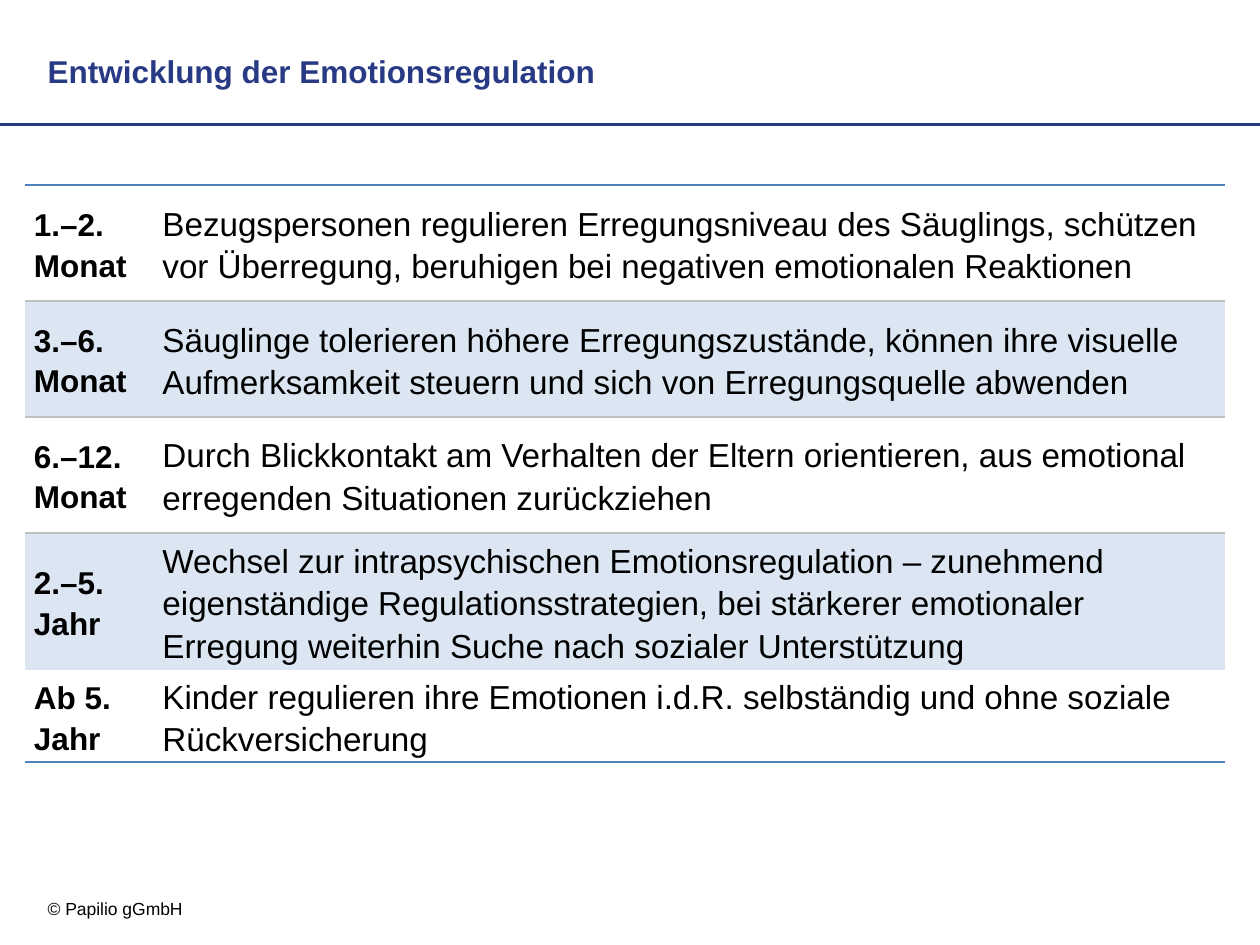
from dataclasses import dataclass

from lxml import etree
from pptx import Presentation
from pptx.dml.color import RGBColor
from pptx.enum import shapes, text
from pptx.oxml.ns import qn
from pptx.util import Inches, Pt


@dataclass(frozen=True)
class Theme:
    font: str = "Arial"
    navy: str = "283A84"
    black: str = "000000"
    blue: str = "4F81BD"
    grey: str = "BFBFBF"
    band: str = "DCE6F2"
    title_size: int = 18
    label_size: int = 18
    body_size: int = 19
    footer_size: int = 10


@dataclass(frozen=True)
class Stage:
    age: str
    description: str
    height: float = 0.92
    top: str | None = None
    bottom: str | None = None


THEME = Theme()
NO_STYLE = "{2D5ABB26-0587-4C30-8999-92F81FD0307C}"
COLUMNS = (1.02, 8.5)
STAGES = (
    Stage("1.–2. Monat",
          "Bezugspersonen regulieren Erregungsniveau des Säuglings, schützen "
          "vor Überregung, beruhigen bei negativen emotionalen Reaktionen",
          top=THEME.blue, bottom=THEME.grey),
    Stage("3.–6. Monat",
          "Säuglinge tolerieren höhere Erregungszustände, können ihre visuelle "
          "Aufmerksamkeit steuern und sich von Erregungsquelle abwenden",
          top=THEME.grey, bottom=THEME.grey),
    Stage("6.–12. Monat",
          "Durch Blickkontakt am Verhalten der Eltern orientieren, aus emotional "
          "erregenden Situationen zurückziehen", top=THEME.grey),
    Stage("2.–5. Jahr",
          "Wechsel zur intrapsychischen Emotionsregulation – zunehmend "
          "eigenständige Regulationsstrategien, bei stärkerer emotionaler "
          "Erregung weiterhin Suche nach sozialer Unterstützung"),
    Stage("Ab 5. Jahr",
          "Kinder regulieren ihre Emotionen i.d.R. selbständig und ohne soziale "
          "Rückversicherung", height=0.61, bottom=THEME.blue),
)


def style_paragraph(para, size: int, color: str, bold: bool = False) -> None:
    para.font.name = THEME.font
    para.font.size = Pt(size)
    para.font.bold = bold
    para.font.color.rgb = RGBColor.from_string(color)


def add_text(page, content: str, left: float, top: float, width: float,
             height: float, size: int, color: str, bold: bool = False) -> None:
    box = page.shapes.add_textbox(
        Inches(left), Inches(top), Inches(width), Inches(height))
    box.text_frame.word_wrap = True
    para = box.text_frame.paragraphs[0]
    para.text = content
    style_paragraph(para, size, color, bold)


def add_rule(page, top: float) -> None:
    rule = page.shapes.add_connector(
        shapes.MSO_CONNECTOR.STRAIGHT, 0, Inches(top), Inches(10), Inches(top))
    rule.line.color.rgb = RGBColor.from_string(THEME.navy)
    rule.line.width = Pt(1.5)
    etree.SubElement(rule._element.spPr, qn("a:effectLst"))


def add_border(cell, side: str, color: str) -> None:
    """Draw a 1 pt border; side is 'T' or 'B'."""
    line = etree.SubElement(
        cell._tc.get_or_add_tcPr(), qn(f"a:ln{side}"), w=str(Pt(1)))
    fill = etree.SubElement(line, qn("a:solidFill"))
    etree.SubElement(fill, qn("a:srgbClr"), val=color)


def fill_cell(cell, content: str, size: int, bold: bool,
              stage: Stage, banded: bool) -> None:
    cell.margin_left = cell.margin_right = Inches(0.07)
    cell.margin_top = cell.margin_bottom = 0
    cell.vertical_anchor = text.MSO_ANCHOR.MIDDLE
    for side, color in (("T", stage.top), ("B", stage.bottom)):
        if color:
            add_border(cell, side, color)
    if banded:
        cell.fill.solid()
        cell.fill.fore_color.rgb = RGBColor.from_string(THEME.band)
    else:
        cell.fill.background()
    para = cell.text_frame.paragraphs[0]
    para.text = content
    para.line_spacing = 1.15
    style_paragraph(para, size, THEME.black, bold)


def add_stage_table(page, left: float, top: float) -> None:
    frame = page.shapes.add_table(
        len(STAGES), len(COLUMNS), Inches(left), Inches(top),
        Inches(sum(COLUMNS)), Inches(sum(stage.height for stage in STAGES)))
    table = frame.table
    table.first_row = table.horz_banding = False
    table._tbl.tblPr.find(qn("a:tableStyleId")).text = NO_STYLE
    for column, width in zip(table.columns, COLUMNS):
        column.width = Inches(width)
    for index, stage in enumerate(STAGES):
        table.rows[index].height = Inches(stage.height)
        banded = index % 2 == 1
        fill_cell(table.cell(index, 0), stage.age, THEME.label_size,
                  True, stage, banded)
        fill_cell(table.cell(index, 1), stage.description, THEME.body_size,
                  False, stage, banded)


def main() -> None:
    deck = Presentation()
    deck.slide_width, deck.slide_height = Inches(10), Inches(7.5)
    page = deck.slides.add_slide(deck.slide_layouts[6])
    add_rule(page, 0.99)
    add_text(page, "© Papilio gGmbH", 0.28, 7.08, 2.17, 0.27,
             THEME.footer_size, THEME.black)
    add_text(page, "Entwicklung der Emotionsregulation", 0.28, 0.36, 7.64, 0.39,
             THEME.title_size, THEME.navy, bold=True)
    add_stage_table(page, 0.2, 1.47)
    deck.save("out.pptx")


if __name__ == "__main__":
    main()
